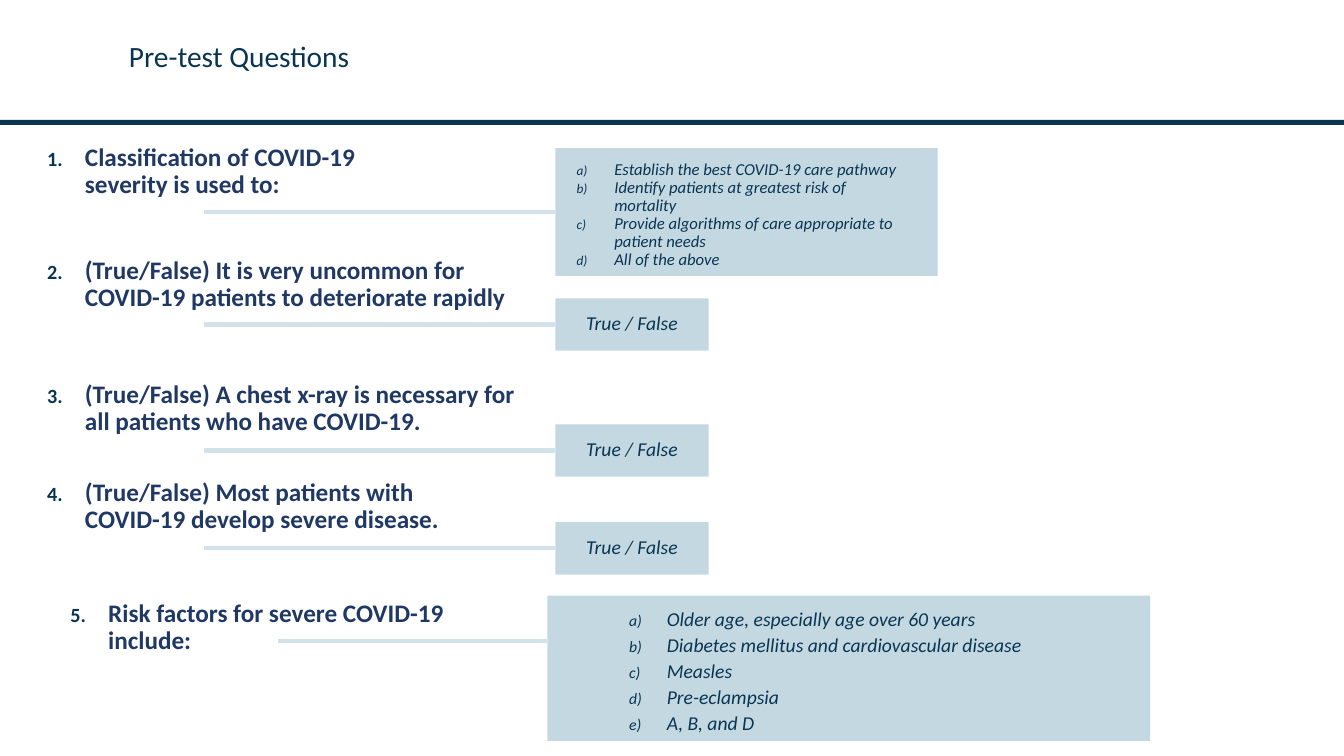
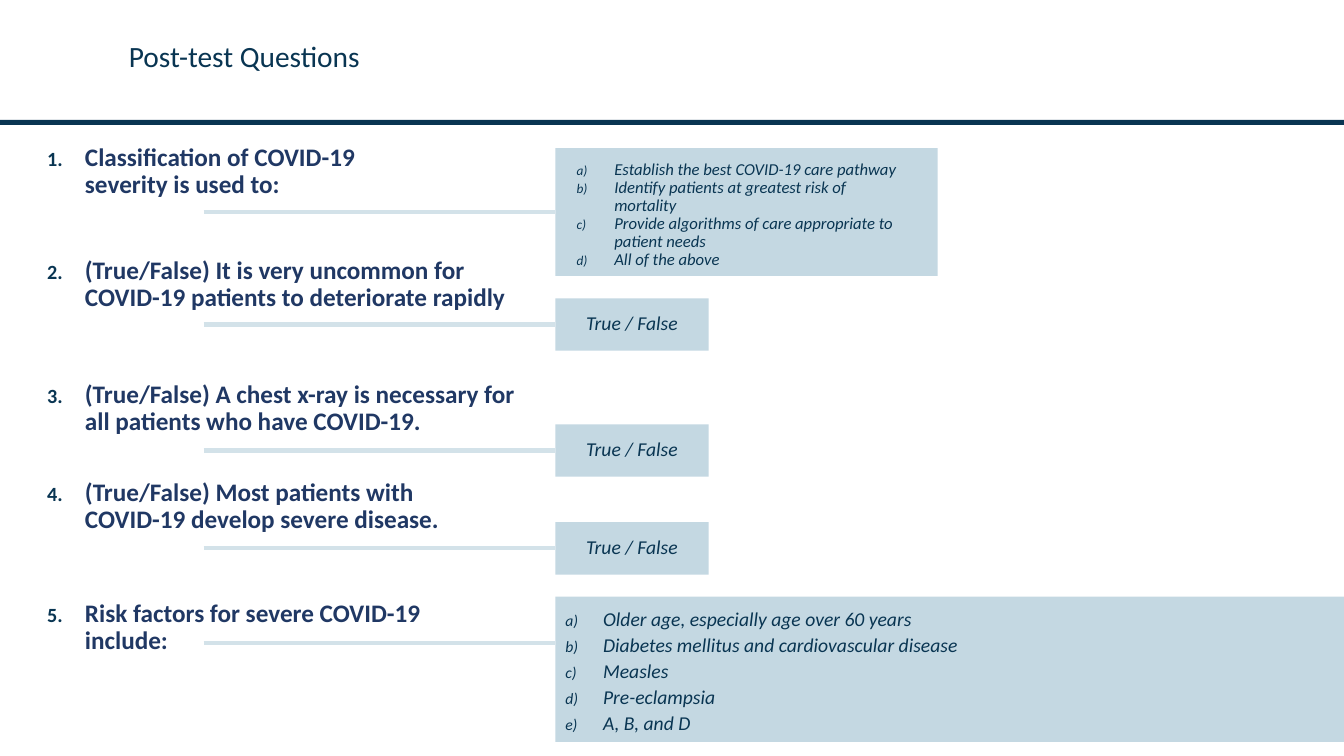
import pptx
import pptx.util
import pptx.dml.color
import pptx.enum.shapes
import pptx.enum.text
import pptx.oxml.ns
import lxml.etree

Pt = pptx.util.Pt
ANCHOR = pptx.enum.text.MSO_ANCHOR
ALIGN = pptx.enum.text.PP_ALIGN

FONT = "Calibri"
COLORS = {"navy": "093552", "question": "203864", "answer": "C4D8E2", "line": "D3E2E9"}
PAGE_WIDTH, PAGE_HEIGHT = 960, 540
QUESTION_LEFT, ANSWER_LEFT, LINE_LEFT = 26.6, 396.7, 145.4
INDENT = 27

# Text, top and width of each question
QUESTIONS = [
    ("Classification of COVID-19 severity is used to:", 100, 273),
    ("(True/False) It is very uncommon for COVID-19 patients to deteriorate rapidly", 180.7, 366),
    ("(True/False) A chest x-ray is necessary for all patients who have COVID-19.", 269.3, 366),
    ("(True/False) Most patients with COVID-19 develop severe disease.", 339.1, 327.6),
    ("Risk factors for severe COVID-19 include:", 425.5, 311),
]
PURPOSES = [
    "Establish the best COVID-19 care pathway",
    "Identify patients at greatest risk of mortality",
    "Provide algorithms of care appropriate to patient needs",
    "All of the above",
]
RISK_FACTORS = [
    "Older age, especially age over 60 years",
    "Diabetes mellitus and cardiovascular disease",
    "Measles",
    "Pre-eclampsia",
    "A, B, and D",
]
TRUE_FALSE_TOPS = [213.1, 303.1, 373]

# The last question is placed differently on each page
QUIZZES = [
    {"title": "Pre-test Questions", "question_left": 43.2, "line": (198.7, 457.9),
     "risk_box": (391, 425.5, 430.6, 103.7), "insets": (58.3, 6.5, 0, 0)},
    {"title": "Post-test Questions", "question_left": QUESTION_LEFT, "line": (LINE_LEFT, 459.4),
     "risk_box": (ANSWER_LEFT, 426.2, PAGE_WIDTH - ANSWER_LEFT, 103.7), "insets": (7.2, 5.8, 0, 0)},
]


def rgb(name):
    return pptx.dml.color.RGBColor.from_string(COLORS[name])


def add_element(parent, tag, **attributes):
    element = lxml.etree.SubElement(parent, pptx.oxml.ns.qn(tag))
    for key, value in attributes.items():
        element.set(key, str(value))
    return element


def number_paragraph(paragraph, scheme, start):
    """Turn the paragraph into an automatically numbered item with a hanging indent."""
    properties = paragraph._p.get_or_add_pPr()
    properties.set("marL", str(Pt(INDENT)))
    properties.set("indent", str(-Pt(INDENT)))
    color = add_element(properties, "a:buClr")
    add_element(color, "a:srgbClr", val=COLORS["navy"])
    add_element(properties, "a:buSzPct", val=80000)
    add_element(properties, "a:buFont", typeface=FONT)
    number = add_element(properties, "a:buAutoNum", type=scheme)
    if start > 1:
        number.set("startAt", str(start))


def write(box, lines, size, color="navy", bold=False, italic=False, spacing=0.9,
          align=ALIGN.LEFT, anchor=ANCHOR.TOP, insets=None, scheme=None, start=1):
    frame = box.text_frame
    frame.text = "\n".join(lines)
    frame.word_wrap = True
    frame.vertical_anchor = anchor
    if insets:
        (frame.margin_left, frame.margin_top,
         frame.margin_right, frame.margin_bottom) = map(Pt, insets)
    for paragraph in frame.paragraphs:
        paragraph.alignment = align
        paragraph.line_spacing = spacing
        if scheme:
            number_paragraph(paragraph, scheme, start)
        for span in paragraph.runs:
            span.font.name = FONT
            span.font.size = Pt(size)
            span.font.bold = bold
            span.font.italic = italic
            span.font.color.rgb = rgb(color)


def add_text(page, place, lines, size, **style):
    write(page.shapes.add_textbox(*map(Pt, place)), lines, size, **style)


def add_rectangle(page, place, color):
    box = page.shapes.add_shape(pptx.enum.shapes.MSO_SHAPE.RECTANGLE, *map(Pt, place))
    box.shadow.inherit = False
    box.fill.solid()
    box.fill.fore_color.rgb = rgb(color)
    box.line.fill.background()
    return box


def add_answer(page, place, lines, size, line_start=None, **style):
    """Draw an answer box and its line, joined at mid-height unless a start point is given."""
    left, top, _, height = place
    box = add_rectangle(page, place, "answer")
    write(box, lines, size, italic=True, **style)
    x, y = line_start or (LINE_LEFT, top + height / 2)
    line = page.shapes.add_connector(
        pptx.enum.shapes.MSO_CONNECTOR.STRAIGHT, Pt(x), Pt(y), Pt(left), Pt(y))
    line.line.color.rgb = rgb("line")
    line.line.width = Pt(3)
    add_element(line._element.spPr, "a:effectLst")
    if line_start is None:
        line.end_connect(box, 1)


def add_quiz(deck, quiz):
    page = deck.slides.add_slide(deck.slide_layouts[6])
    add_rectangle(page, (0, 85.7, PAGE_WIDTH, 3.6), "navy")
    add_text(page, (85, 26.6, 867, 57.6), [quiz["title"]], 21)

    for number, (question, top, width) in enumerate(QUESTIONS, 1):
        left = quiz["question_left"] if number == len(QUESTIONS) else QUESTION_LEFT
        add_text(page, (left, top, width, 60), [question], 18, color="question",
                 bold=True, scheme="arabicPeriod", start=number)

    add_answer(page, (ANSWER_LEFT, 105.8, 273, 91.4), PURPOSES, 11.9,
               insets=(15.1, 9.4, 20.9, 0), scheme="alphaLcParenR")
    for top in TRUE_FALSE_TOPS:
        add_answer(page, (ANSWER_LEFT, top, 109.5, 37.4), ["True / False"], 14,
                   align=ALIGN.CENTER, anchor=ANCHOR.MIDDLE)
    add_answer(page, quiz["risk_box"], RISK_FACTORS, 14, line_start=quiz["line"],
               spacing=1.1, insets=quiz["insets"], scheme="alphaLcParenR")


def main():
    deck = pptx.Presentation()
    deck.slide_width, deck.slide_height = Pt(PAGE_WIDTH), Pt(PAGE_HEIGHT)
    for quiz in QUIZZES:
        add_quiz(deck, quiz)
    deck.save("out.pptx")


if __name__ == "__main__":
    main()
